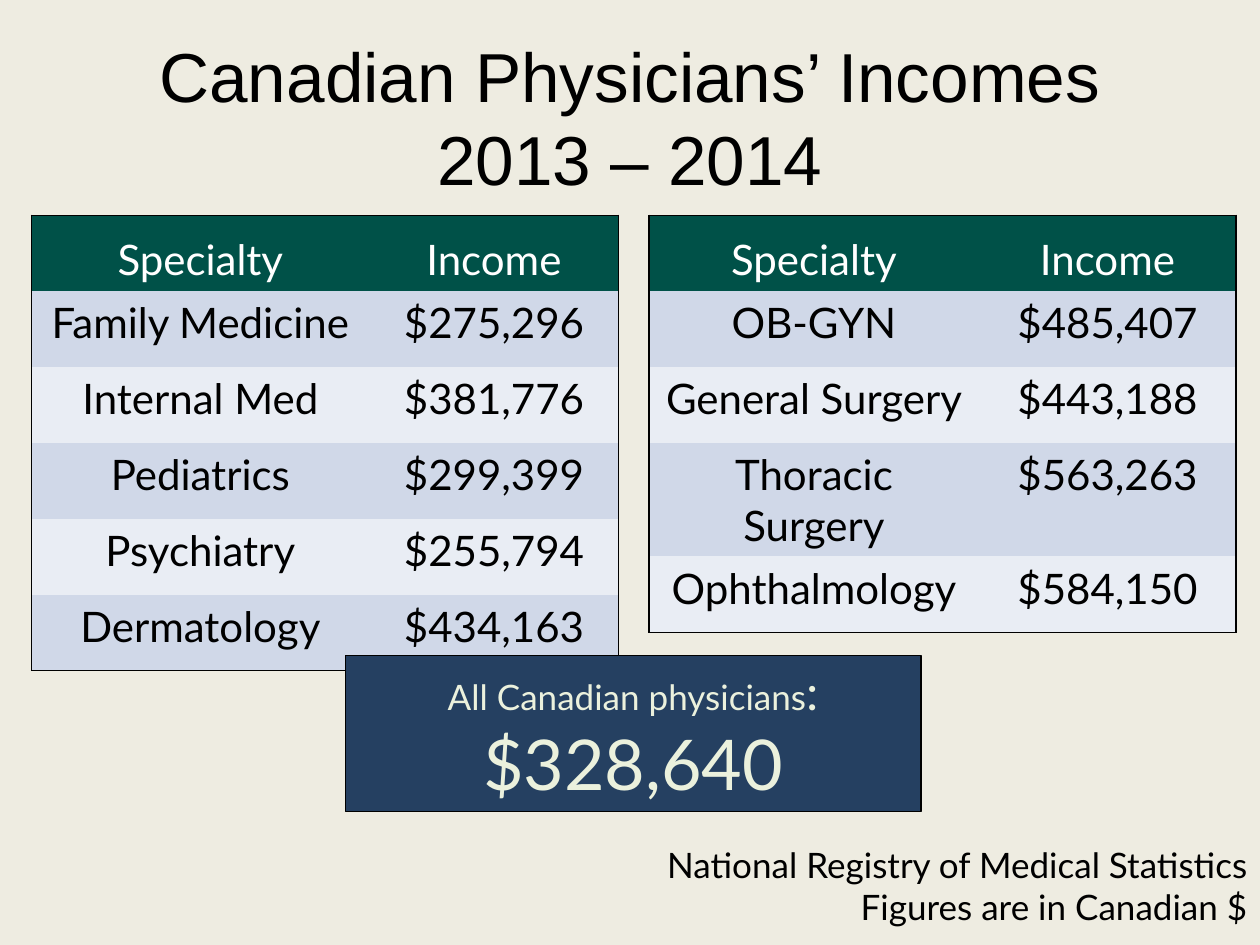
import pptx
import pptx.dml.color
import pptx.enum.shapes
import pptx.enum.text
import pptx.oxml
import pptx.oxml.ns
import pptx.util
from dataclasses import dataclass


@dataclass(frozen=True)
class Theme:
    paper: str = "EEECE1"
    ink: str = "000000"
    header: str = "005148"
    header_text: str = "FFFFFF"
    bands: tuple = ("D0D8E8", "E9EDF4")
    callout: str = "254061"
    callout_text: str = "EBF1DD"
    title_font: str = "Arial"
    body_font: str = "Lato"
    title_size: float = 39.6
    table_size: int = 24
    note_size: int = 20
    colon_size: int = 28
    total_size: int = 40


theme = Theme()
rgb = pptx.dml.color.RGBColor.from_string
align = pptx.enum.text.PP_ALIGN
anchor = pptx.enum.text.MSO_ANCHOR

deck = pptx.Presentation()
deck.slide_width = pptx.util.Inches(10)
deck.slide_height = pptx.util.Inches(7.5)
page = deck.slides.add_slide(deck.slide_layouts[6])
page.background.fill.solid()
page.background.fill.fore_color.rgb = rgb(theme.paper)


def grid(*cells):
    return [round(cell * deck.slide_width / 100) for cell in cells]


def write(para, text, *, size, color=theme.ink, font=theme.body_font, side=align.CENTER):
    para.alignment = side
    span = para.add_run()
    span.text = text
    span.font.size = pptx.util.Pt(size)
    span.font.name = font
    span.font.bold = False
    span.font.color.rgb = rgb(color)


text_blocks = [
    ((43.4, 66.4, 56.6, 7.7),
     ["National Registry of Medical Statistics", "Figures are in Canadian $"],
     dict(size=theme.note_size, side=align.RIGHT)),
    ((5, 3, 90, 12.5),
     ["Canadian Physicians’ Incomes", "2013 – 2014"],
     dict(size=theme.title_size, font=theme.title_font)),
]
for area, lines, look in text_blocks:
    frame = page.shapes.add_textbox(*grid(*area)).text_frame
    frame.word_wrap = True
    frame.vertical_anchor = anchor.MIDDLE
    for index, line in enumerate(lines):
        para = frame.add_paragraph() if index else frame.paragraphs[0]
        write(para, line, **look)

heading = ("Specialty", "Income")
income_tables = [
    (2.5, (26.8, 19.8), [
        heading,
        ("Family Medicine", "$275,296"),
        ("Internal Med", "$381,776"),
        ("Pediatrics", "$299,399"),
        ("Psychiatry", "$255,794"),
        ("Dermatology", "$434,163"),
    ]),
    (51.5, (26.2, 20.4), [
        heading,
        ("OB-GYN", "$485,407"),
        ("General Surgery", "$443,188"),
        ("Thoracic Surgery", "$563,263"),
        ("Ophthalmology", "$584,150"),
    ]),
]
row_height = 6.02
border_width = pptx.util.Pt(1)
for left, widths, rows in income_tables:
    area = grid(left, 17.1, sum(widths), row_height * len(rows))
    table = page.shapes.add_table(len(rows), len(widths), *area).table
    table.first_row = table.horz_banding = False
    for column, width in zip(table.columns, grid(*widths)):
        column.width = width
    for r, values in enumerate(rows):
        table.rows[r].height = grid(row_height)[0]
        for c, value in enumerate(values):
            cell = table.cell(r, c)
            edges = {"lnL": c == 0, "lnR": c == len(widths) - 1,
                     "lnT": r == 0, "lnB": r == len(rows) - 1}
            properties = cell._tc.get_or_add_tcPr()
            for tag, outer in edges.items():
                paint = (f'<a:solidFill><a:srgbClr val="{theme.ink}"/></a:solidFill>'
                         if outer else "<a:noFill/>")
                properties.append(pptx.oxml.parse_xml(
                    f'<a:{tag} {pptx.oxml.ns.nsdecls("a")} w="{border_width}">{paint}</a:{tag}>'))
            cell.fill.solid()
            cell.fill.fore_color.rgb = rgb(theme.bands[(r - 1) % 2] if r else theme.header)
            cell.vertical_anchor = anchor.TOP if r else anchor.BOTTOM
            write(cell.text_frame.paragraphs[0], value, size=theme.table_size,
                  color=theme.ink if r else theme.header_text)

box = page.shapes.add_shape(pptx.enum.shapes.MSO_SHAPE.RECTANGLE, *grid(27.4, 52, 45.7, 12.4))
box.shadow.inherit = False
box.fill.solid()
box.fill.fore_color.rgb = rgb(theme.callout)
box.line.color.rgb = rgb(theme.ink)
box.line.width = pptx.util.Pt(0.75)
box.text_frame.word_wrap = True
box.text_frame.vertical_anchor = anchor.MIDDLE
for text, size in [("All Canadian physicians", theme.note_size),
                   (": ", theme.colon_size), ("$328,640", theme.total_size)]:
    write(box.text_frame.paragraphs[0], text, size=size, color=theme.callout_text)

deck.save("out.pptx")
